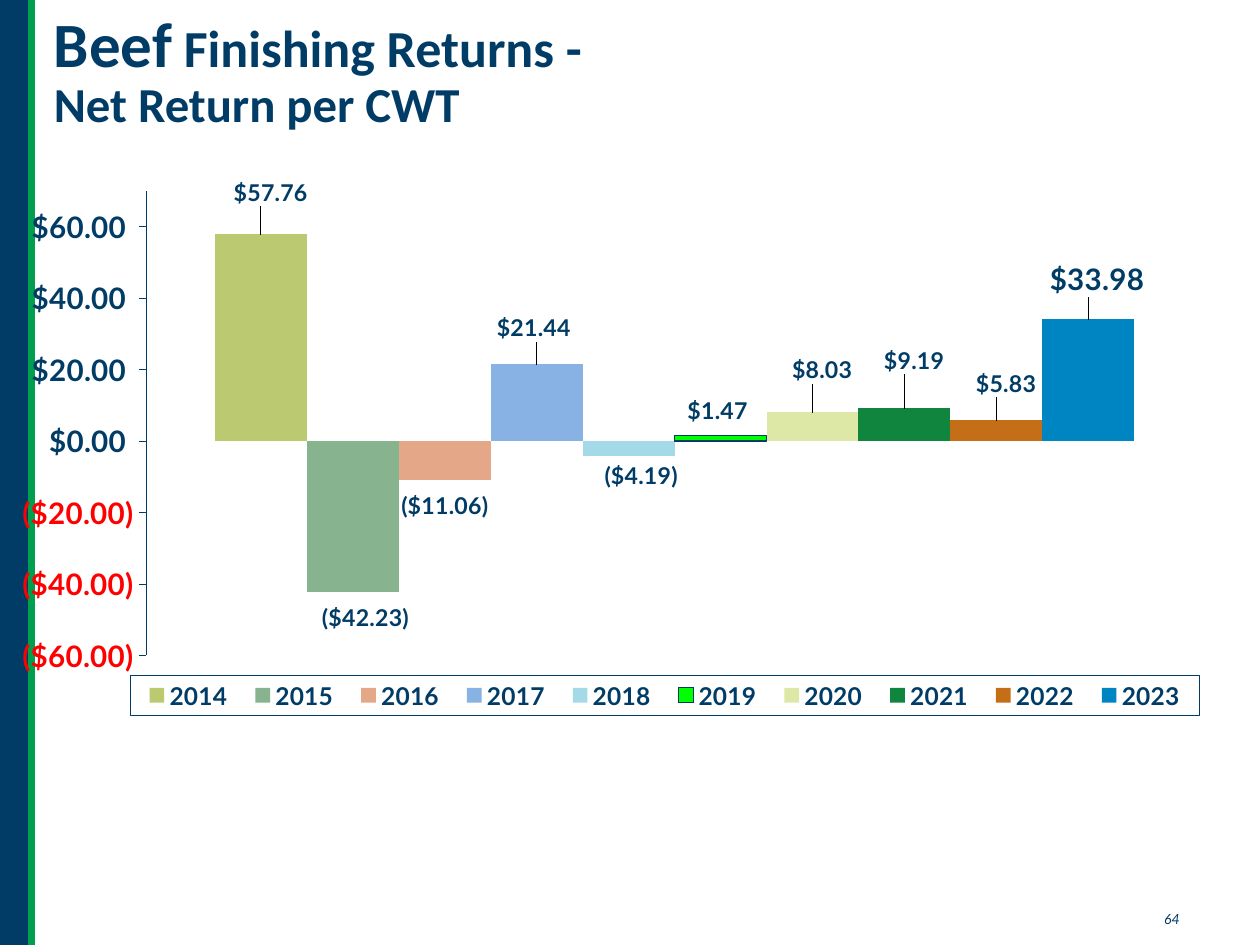
from lxml.etree import SubElement
from pptx import Presentation
from pptx.chart.data import CategoryChartData
from pptx.dml.color import RGBColor
from pptx.enum.chart import (XL_CHART_TYPE, XL_LABEL_POSITION, XL_LEGEND_POSITION,
                             XL_TICK_LABEL_POSITION, XL_TICK_MARK)
from pptx.enum.shapes import MSO_CONNECTOR, MSO_SHAPE
from pptx.enum.text import MSO_ANCHOR
from pptx.oxml import parse_xml
from pptx.oxml.ns import nsdecls, qn
from pptx.util import Inches, Pt

NAVY, GREEN = "003C66", "009F4D"
WIDTH, HEIGHT = 10, 7.5
STRIPE = 0.25
TITLE_LINES = [[("Beef", 36), (" Finishing Returns -", 29.7)],
               [("Net Return per CWT", 27.9)]]
PAGE_NUMBER = "64"

# year, net return, bar colour, label shift as shares of chart width and height
RETURNS = [
    ("2014", 57.76, "BBC970", 0.01, -0.04),
    ("2015", -42.23, "87B38F", 0.01, 0.01),
    ("2016", -11.06, "E4A787", 0, 0.01),
    ("2017", 21.44, "87B2E3", 0, -0.03),
    ("2018", -4.19, "A4D9E8", 0.01, 0),
    ("2019", 1.47, "00FF00", 0, -0.01),
    ("2020", 8.03, "DDE8A6", 0.01, -0.04),
    ("2021", 9.19, "10853D", 0.01, -0.05),
    ("2022", 5.83, "C46E17", 0.01, -0.03),
    ("2023", 33.98, "0085C3", 0.01, -0.03),
]
OUTLINED_YEAR, LATEST_YEAR = "2019", "2023"
AXIS_FORMAT = '"$"#,##0.00_);[Red]\\("$"#,##0.00\\)'
LABEL_FORMAT = '"$"#,##0.00_);\\("$"#,##0.00\\)'
PLOT_AREA = (0.149, 0.038, 0.839, 0.805)
LEGEND_AREA = (0.136, 0.878, 0.849, 0.069)


def rgb(colour):
    return RGBColor.from_string(colour)


def style(font, size, name="Lato", bold=True):
    font.size, font.name, font.bold = Pt(size), name, bold
    font.color.rgb = rgb(NAVY)


def outline(line, width):
    line.color.rgb = rgb(NAVY)
    line.width = Pt(width)


def manual_layout(**settings):
    """Chart layout element with the given settings, in schema order."""
    layout = parse_xml(f"<c:layout {nsdecls('c')}><c:manualLayout/></c:layout>")
    for tag, value in settings.items():
        SubElement(layout[0], qn(f"c:{tag}")).set("val", str(value))
    return layout


def area_layout(area, **target):
    x, y, w, h = area
    return manual_layout(**target, xMode="edge", yMode="edge", x=x, y=y, w=w, h=h)


def add_text_frame(slide, left, top, width, height):
    frame = slide.shapes.add_textbox(*map(Inches, (left, top, width, height))).text_frame
    frame.word_wrap = True
    return frame


def add_side_band(slide):
    band = slide.shapes.add_shape(MSO_SHAPE.RECTANGLE, 0, 0, Inches(STRIPE), Inches(HEIGHT))
    band.shadow.inherit = False
    band.fill.solid()
    band.fill.fore_color.rgb = rgb(NAVY)
    band.line.fill.background()
    edge = slide.shapes.add_connector(MSO_CONNECTOR.STRAIGHT, Inches(STRIPE), 0,
                                      Inches(STRIPE), Inches(HEIGHT))
    edge.line.color.rgb = rgb(GREEN)
    edge.line.width = Pt(4.5)
    SubElement(edge._element.spPr, qn("a:effectLst"))


def add_title(slide):
    frame = add_text_frame(slide, 0.33, 0.08, 6, 1)
    frame.vertical_anchor = MSO_ANCHOR.MIDDLE
    paragraph = frame.paragraphs[0]
    paragraph.line_spacing = 0.9
    for number, line in enumerate(TITLE_LINES):
        if number:
            paragraph.add_line_break()
        for words, size in line:
            run = paragraph.add_run()
            run.text = words
            style(run.font, size, "Calibri")


def add_page_number(slide):
    frame = add_text_frame(slide, 9.14, 7.18, 0.45, 0.24)
    frame.text = PAGE_NUMBER
    font = frame.paragraphs[0].runs[0].font
    style(font, 8, bold=False)
    font.italic = True


def label_bar(series, size, dx, dy):
    label = series.points[0].data_label
    style(label.font, size)
    label.position = XL_LABEL_POSITION.OUTSIDE_END
    index = series._element.find(f".//{qn('c:dLbl')}/{qn('c:idx')}")
    number_format = parse_xml(f"<c:numFmt {nsdecls('c')} sourceLinked='0'/>")
    number_format.set("formatCode", LABEL_FORMAT)
    index.addnext(number_format)
    index.addnext(manual_layout(x=dx, y=dy))


def add_returns_chart(slide):
    data = CategoryChartData()
    data.categories = ["1"]
    for year, value, *_ in RETURNS:
        data.add_series(year, [value])
    chart = slide.shapes.add_chart(XL_CHART_TYPE.COLUMN_CLUSTERED, Inches(-0.33), Inches(1.34),
                                   Inches(WIDTH), Inches(4.58), data).chart
    style(chart.font, 16.9)
    chart.has_title = False

    plot = chart.plots[0]
    plot.gap_width, plot.overlap, plot.vary_by_categories = 150, 0, False
    for series, (year, _, colour, dx, dy) in zip(plot.series, RETURNS):
        series.invert_if_negative = False
        series.format.fill.solid()
        series.format.fill.fore_color.rgb = rgb(colour)
        if year == OUTLINED_YEAR:
            outline(series.format.line, 0.94)
        label_bar(series, 16.9 if year == LATEST_YEAR else 13.2, dx, dy)

    chart.category_axis.visible = False
    axis = chart.value_axis
    axis.minimum_scale, axis.maximum_scale, axis.major_unit = -60, 70, 20
    axis.has_major_gridlines = False
    axis.major_tick_mark = XL_TICK_MARK.OUTSIDE
    axis.tick_label_position = XL_TICK_LABEL_POSITION.NEXT_TO_AXIS
    axis.tick_labels.number_format = AXIS_FORMAT
    axis.tick_labels.number_format_is_linked = False
    style(axis.tick_labels.font, 16.9)
    outline(axis.format.line, 0.23)

    chart.has_legend = True
    legend = chart.legend
    legend.position = XL_LEGEND_POSITION.BOTTOM
    legend.include_in_layout = False
    style(legend.font, 14)
    legend_element = legend._element
    for old in legend_element.findall(qn("c:layout")):
        legend_element.remove(old)
    legend_element.find(qn("c:legendPos")).addnext(area_layout(LEGEND_AREA))
    legend_element.find(qn("c:overlay")).addnext(parse_xml(
        f"<c:spPr {nsdecls('c', 'a')}><a:ln w='3175'><a:solidFill>"
        f"<a:srgbClr val='{NAVY}'/></a:solidFill></a:ln></c:spPr>"))

    plot_area = chart._chartSpace.chart.plotArea
    for old in plot_area.findall(qn("c:layout")):
        plot_area.remove(old)
    plot_area.insert(0, area_layout(PLOT_AREA, layoutTarget="inner"))


def main():
    deck = Presentation()
    deck.slide_width, deck.slide_height = Inches(WIDTH), Inches(HEIGHT)
    slide = deck.slides.add_slide(deck.slide_layouts[6])
    add_page_number(slide)
    add_side_band(slide)
    add_title(slide)
    add_returns_chart(slide)
    deck.save("out.pptx")


if __name__ == "__main__":
    main()
